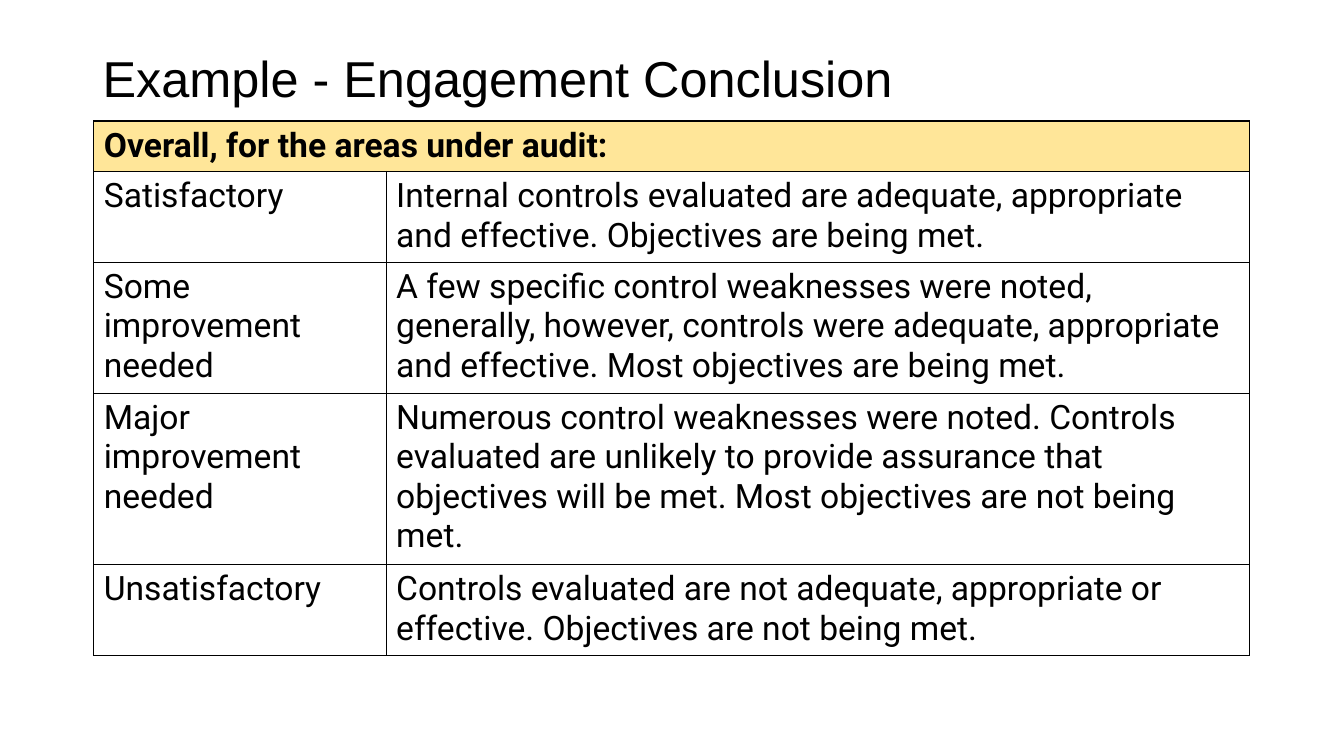
import pptx
import pptx.dml.color
import pptx.enum.text
import pptx.oxml
import pptx.oxml.ns
import pptx.util
from pptx.util import Inches

COLORS = {"text": "000000", "border": "000000", "header": "FFE699", "body": "FFFFFF"}

HEADER = "Overall, for the areas under audit:"
RATINGS = [
    ("Satisfactory",
     "Internal controls evaluated are adequate, appropriate and effective. "
     "Objectives are being met."),
    ("Some improvement needed",
     "A few specific control weaknesses were noted, generally, however, controls "
     "were adequate, appropriate and effective. Most objectives are being met."),
    ("Major improvement needed",
     "Numerous control weaknesses were noted. Controls evaluated are unlikely to "
     "provide assurance that objectives will be met. Most objectives are not being met."),
    ("Unsatisfactory",
     "Controls evaluated are not adequate, appropriate or effective. "
     "Objectives are not being met."),
]


def rgb(name):
    return pptx.dml.color.RGBColor.from_string(COLORS[name])


class SlideBuilder:
    title_font, title_size = "Arial", 36
    table_font, table_size = "Roboto", 24
    border_width = 1

    def __init__(self, slide):
        self.s = slide

    def set_text(self, tf, text, font, size, bold=False):
        p = tf.paragraphs[0]
        p.text = text
        p.font.name = font
        p.font.size = pptx.util.Pt(size)
        p.font.bold = bold
        p.font.color.rgb = rgb("text")
        return p

    def title(self, text, left, top, width, height):
        sp = self.s.shapes.add_textbox(Inches(left), Inches(top), Inches(width), Inches(height))
        tf = sp.text_frame
        tf.word_wrap = True
        tf.vertical_anchor = pptx.enum.text.MSO_ANCHOR.MIDDLE
        p = self.set_text(tf, text, self.title_font, self.title_size)
        p.line_spacing = 0.9

    def cell(self, cell, text, fill, bold=False):
        self.set_text(cell.text_frame, text, self.table_font, self.table_size, bold)
        self.style_cell(cell, fill)

    def style_cell(self, cell, fill):
        cell.fill.solid()
        cell.fill.fore_color.rgb = rgb(fill)
        # Borders come before the fill in the cell properties
        width = pptx.util.Pt(self.border_width)
        for i, side in enumerate(("lnL", "lnR", "lnT", "lnB")):
            line = pptx.oxml.parse_xml(
                f'<a:{side} {pptx.oxml.ns.nsdecls("a")} w="{width}"><a:solidFill>'
                f'<a:srgbClr val="{COLORS["border"]}"/></a:solidFill></a:{side}>')
            cell._tc.get_or_add_tcPr().insert(i, line)

    def table(self, header, rows, left, top, col_widths, row_height, height):
        frame = self.s.shapes.add_table(
            len(rows) + 1, len(col_widths), Inches(left), Inches(top),
            Inches(sum(col_widths)), Inches(height))
        table = frame.table
        for column, width in zip(table.columns, col_widths):
            column.width = Inches(width)
        # Rows grow from a minimum height to fit their text
        for row in table.rows:
            row.height = Inches(row_height)
        frame.height = Inches(height)

        # Header across all columns
        first, last = table.cell(0, 0), table.cell(0, len(col_widths) - 1)
        first.merge(last)
        self.cell(first, header, "header", bold=True)
        self.style_cell(last, "header")

        # Ratings and their meaning
        for r, texts in enumerate(rows, start=1):
            for c, text in enumerate(texts):
                self.cell(table.cell(r, c), text, "body")


def main():
    prs = pptx.Presentation()
    prs.slide_width, prs.slide_height = Inches(13.33), Inches(7.5)
    builder = SlideBuilder(prs.slides.add_slide(prs.slide_layouts[6]))
    builder.title("Example - Engagement Conclusion", 0.92, 0.4, 11.5, 0.81)
    builder.table(HEADER, RATINGS, 0.93, 1.2, (2.9, 8.56), 0.41, 4.9)
    prs.save("out.pptx")


if __name__ == "__main__":
    main()
